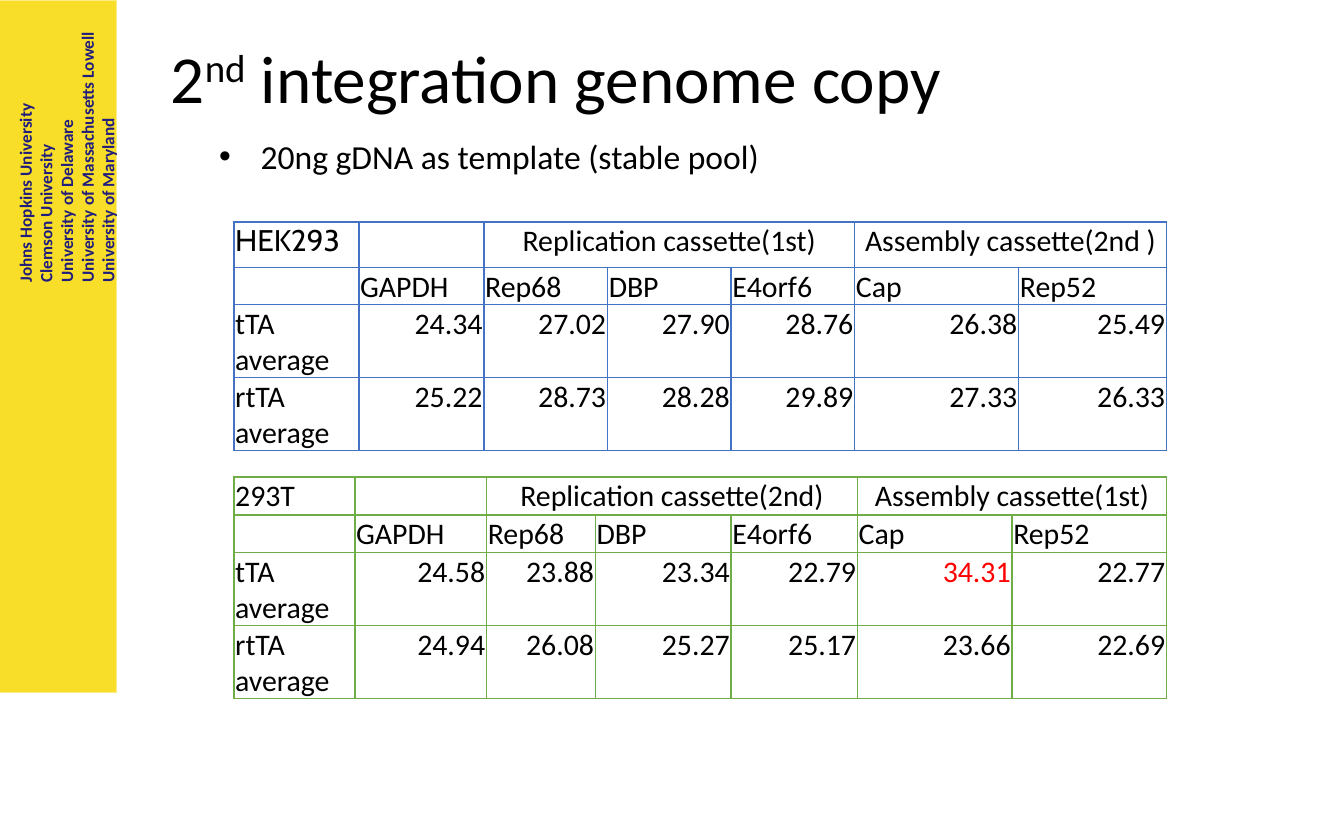
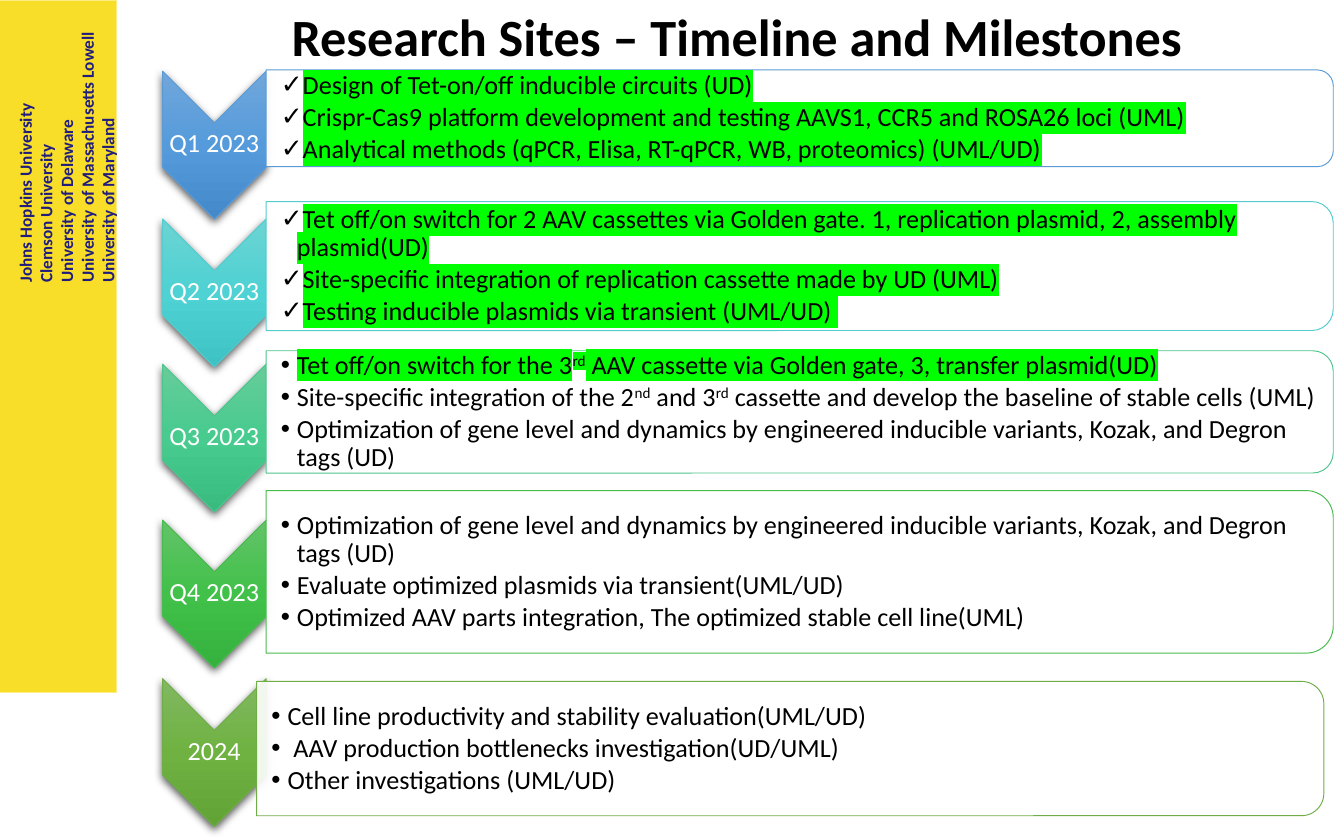
from lxml import etree
from pptx import Presentation
from pptx.dml.color import RGBColor
from pptx.enum import shapes, text
from pptx.oxml import ns
from pptx.util import Inches, Pt

BLACK = RGBColor(0x00, 0x00, 0x00)
WHITE = RGBColor(0xFF, 0xFF, 0xFF)
RED = RGBColor(0xFF, 0x00, 0x00)
DONE_GREEN = RGBColor(0x00, 0xFF, 0x00)
BAND_YELLOW = RGBColor(0xF8, 0xDE, 0x28)
BAND_EDGE = RGBColor(0xFB, 0xEC, 0x85)
NAVY = RGBColor(0x21, 0x1D, 0x7D)
BLUE_BORDER = RGBColor(0x44, 0x72, 0xC4)
GREEN = RGBColor(0x70, 0xAD, 0x47)
BLUE_STAGE = RGBColor(0x5B, 0x9B, 0xD5)
TEAL_STAGE = RGBColor(0x54, 0xCC, 0xCD)
MINT_STAGE = RGBColor(0x4D, 0xC5, 0x8D)
LEAF_STAGE = RGBColor(0x48, 0xBB, 0x4F)
BLUE_FADE = [RGBColor(0x71, 0xA6, 0xDB), RGBColor(0x55, 0x9B, 0xDB), RGBColor(0x44, 0x8A, 0xCA)]
TEAL_FADE = [RGBColor(0x6C, 0xD3, 0xD3), RGBColor(0x4E, 0xD2, 0xD3), RGBColor(0x3E, 0xC2, 0xC3)]
MINT_FADE = [RGBColor(0x67, 0xCC, 0x9A), RGBColor(0x47, 0xCB, 0x8E), RGBColor(0x39, 0xBB, 0x7F)]
LEAF_FADE = [RGBColor(0x63, 0xC3, 0x68), RGBColor(0x42, 0xC1, 0x4A), RGBColor(0x34, 0xB2, 0x3D)]
GREEN_FADE = [RGBColor(0x81, 0xB8, 0x61), RGBColor(0x6F, 0xB2, 0x42), RGBColor(0x62, 0xA3, 0x36)]

LEFT, CENTER, RIGHT = text.PP_ALIGN.LEFT, text.PP_ALIGN.CENTER, text.PP_ALIGN.RIGHT
TOP, MIDDLE = text.MSO_ANCHOR.TOP, text.MSO_ANCHOR.MIDDLE
NO_FIT, GROW = text.MSO_AUTO_SIZE.NONE, text.MSO_AUTO_SIZE.SHAPE_TO_FIT_TEXT

UNIVERSITIES = [
    "Johns Hopkins University",
    "Clemson University",
    "University of Delaware",
    "University of Massachusetts Lowell",
    "University of Maryland",
]
GENES = ["", "GAPDH", "Rep68", "DBP", "E4orf6", "Cap", "Rep52"]
HEK293_ROWS = [
    ["HEK293", "", "Replication cassette(1st)", "", "", "Assembly cassette(2nd )", ""],
    GENES,
    ["tTA average", "24.34", "27.02", "27.90", "28.76", "26.38", "25.49"],
    ["rtTA average", "25.22", "28.73", "28.28", "29.89", "27.33", "26.33"],
]
T293_ROWS = [
    ["293T", "", "Replication cassette(2nd)", "", "", "Assembly cassette(1st)", ""],
    GENES,
    ["tTA average", "24.58", "23.88", "23.34", "22.79", "34.31", "22.77"],
    ["rtTA average", "24.94", "26.08", "25.27", "25.17", "23.66", "22.69"],
]
OPTIMIZATION = ("Optimization of gene level and dynamics by engineered inducible variants, "
                "Kozak, and Degron tags (UD)")
STAGES = [
    ("Q1 2023", 0.53, (1.98, 0.52, 0.72), BLUE_STAGE, BLUE_FADE, "✓", 3, [
        "Design of Tet-on/off inducible circuits (UD)",
        "Crispr-Cas9 platform development and testing AAVS1, CCR5 and ROSA26 loci (UML)",
        "Analytical methods (qPCR, Elisa, RT-qPCR, WB, proteomics) (UML/UD)"]),
    ("Q2 2023", 1.63, (1.98, 1.5, 0.96), TEAL_STAGE, TEAL_FADE, "✓", 3, [
        "Tet off/on switch for 2 AAV cassettes via Golden gate. 1, replication plasmid, "
        "2, assembly plasmid(UD)",
        "Site-specific integration of replication cassette made by UD (UML)",
        "Testing inducible plasmids via transient (UML/UD) "]),
    ("Q3 2023", 2.71, (1.98, 2.61, 0.91), MINT_STAGE, MINT_FADE, "•", 1, [
        "Tet off/on switch for the 3^rd^ AAV cassette via Golden gate, 3, transfer plasmid(UD)",
        "Site-specific integration of the 2^nd^ and 3^rd^ cassette and develop the baseline "
        "of stable cells (UML)",
        OPTIMIZATION]),
    ("Q4 2023", 3.87, (1.98, 3.65, 1.21), LEAF_STAGE, LEAF_FADE, "•", 0, [
        OPTIMIZATION,
        "Evaluate optimized plasmids via transient(UML/UD)",
        "Optimized AAV parts integration, The optimized stable cell line(UML)"]),
    ("2024", 5.05, (1.91, 5.07, 1), GREEN, GREEN_FADE, "•", 0, [
        "Cell line productivity and stability evaluation(UML/UD)",
        " AAV production bottlenecks investigation(UD/UML)",
        "Other investigations (UML/UD)"]),
]


def apply(target, values):
    for name, value in values.items():
        setattr(target, name, value)


def add_xml(parent, tag, **attributes):
    return etree.SubElement(parent, ns.qn(tag), attributes)


def place(shape, left, top, width, height):
    apply(shape, {"left": Inches(left), "top": Inches(top),
                  "width": Inches(width), "height": Inches(height)})


def set_frame(frame, insets=None, **values):
    apply(frame, values)
    if insets:
        sides = ("margin_left", "margin_top", "margin_right", "margin_bottom")
        apply(frame, dict(zip(sides, map(Inches, insets))))


def write(paragraph, wording, size, color=BLACK, bold=False, name="Calibri",
          highlight=None, **layout):
    apply(paragraph, layout)
    for index, part in enumerate(wording.split("^")):
        run = paragraph.add_run()
        run.text = part
        apply(run.font, {"size": Pt(size), "bold": bold, "name": name})
        run.font.color.rgb = color
        properties = run.font._element
        if index % 2:
            properties.set("baseline", "30000")
        if highlight:
            mark = etree.Element(ns.qn("a:highlight"))
            add_xml(mark, "a:srgbClr", val=str(highlight))
            properties.find(ns.qn("a:solidFill")).addnext(mark)


def add_bullet(paragraph, symbol, indent):
    properties = paragraph._p.get_or_add_pPr()
    properties.set("marL", str(Inches(indent)))
    properties.set("indent", str(-Inches(indent)))
    add_xml(properties, "a:buFont", typeface="Arial")
    add_xml(properties, "a:buChar", char=symbol)


def next_paragraph(frame, index):
    return frame.add_paragraph() if index else frame.paragraphs[0]


def add_textbox(slide, box, **frame_values):
    textbox = slide.shapes.add_textbox(*map(Inches, box))
    set_frame(textbox.text_frame, **frame_values)
    return textbox


def add_sidebar(slide):
    band = slide.shapes.add_shape(shapes.MSO_SHAPE.RECTANGLE, 0, 0, Inches(0.87), Inches(5.15))
    band.shadow.inherit = False
    band.fill.solid()
    band.fill.fore_color.rgb = BAND_YELLOW
    band.line.color.rgb = BAND_EDGE
    band.line.width = Pt(0.5)
    partners = add_textbox(slide, (-0.6, 0.78, 2.08, 0.76), word_wrap=False, auto_size=GROW)
    partners.rotation = 270
    partners.fill.solid()
    partners.fill.fore_color.rgb = BAND_YELLOW
    for index, university in enumerate(UNIVERSITIES):
        write(next_paragraph(partners.text_frame, index), university, 9.2, NAVY, bold=True)


def set_title(slide, wording, box, size, anchor, **style):
    title = slide.shapes.title
    place(title, *box)
    set_frame(title.text_frame, vertical_anchor=anchor, word_wrap=True, auto_size=NO_FIT)
    write(title.text_frame.paragraphs[0], wording, size, **style)


def set_borders(cell, color):
    properties = cell._tc.get_or_add_tcPr()
    for side in ("a:lnL", "a:lnR", "a:lnT", "a:lnB"):
        border = add_xml(properties, side, w=str(Pt(1)))
        add_xml(add_xml(border, "a:solidFill"), "a:srgbClr", val=str(color))


def cell_alignment(row, column):
    if row == 0 and column >= 2:
        return CENTER
    return RIGHT if row >= 2 and column >= 1 else LEFT


def add_cycle_table(slide, top, height, rows, widths, heights, border, fonts={}, colors={}):
    frame = slide.shapes.add_table(len(rows), len(widths), Inches(1.74), Inches(top),
                                   Inches(6.95), Inches(height))
    table = frame.table
    apply(table, {"first_row": False, "horz_banding": False})
    for column, width in zip(table.columns, widths):
        column.width = Inches(width)
    for row, row_height in zip(table.rows, heights):
        row.height = Inches(row_height)
    for r, values in enumerate(rows):
        for c, value in enumerate(values):
            cell = table.cell(r, c)
            set_frame(cell, insets=(0.01, 0.01, 0.01, 0))
            set_borders(cell, border)
            cell.fill.background()
            paragraph = cell.text_frame.paragraphs[0]
            if value:
                write(paragraph, value, 16, colors.get(value, BLACK),
                      name=fonts.get(value, "Calibri"), alignment=cell_alignment(r, c))
            else:
                add_xml(paragraph._p, "a:endParaRPr", sz="1600")
    for first, last in ((2, 4), (5, 6)):
        table.cell(0, first).merge(table.cell(0, last))
    frame.height = Inches(height)


def add_turned_shape(slide, kind, left, top, width, height, edge):
    shape = slide.shapes.add_shape(kind, Inches(left + (width - height) / 2),
                                   Inches(top + (height - width) / 2),
                                   Inches(height), Inches(width))
    shape.rotation = 90
    shape.shadow.inherit = False
    shape.line.color.rgb = edge
    shape.line.width = Pt(0.5)
    return shape


def fill_gradient(shape, colors):
    gradient = etree.Element(ns.qn("a:gradFill"), rotWithShape="0")
    stops = add_xml(gradient, "a:gsLst")
    for position, color in zip(("0", "50000", "100000"), colors):
        add_xml(add_xml(stops, "a:gs", pos=position), "a:srgbClr", val=str(color))
    add_xml(gradient, "a:lin", ang="5400000", scaled="0")
    shape._element.spPr.find(ns.qn("a:prstGeom")).addnext(gradient)


def add_soft_shadow(shape):
    effects = shape._element.spPr.find(ns.qn("a:effectLst"))
    shadow = add_xml(effects, "a:outerShdw", blurRad=str(Pt(4.5)), dist=str(Pt(1.5)),
                     dir="5400000", algn="ctr", rotWithShape="0")
    add_xml(add_xml(shadow, "a:srgbClr", val=str(BLACK)), "a:alpha", val="63000")


def add_stage(slide, label, chevron_top, panel_box, edge, fade, symbol, done, tasks):
    chevron = add_turned_shape(slide, shapes.MSO_SHAPE.CHEVRON, 1.21, chevron_top,
                               0.77, 1.1, edge)
    fill_gradient(chevron, fade)
    add_soft_shadow(chevron)
    period = add_textbox(slide, (1.21, chevron_top + 0.38, 0.77, 0.33), insets=[0.01] * 4,
                         word_wrap=True, vertical_anchor=MIDDLE)
    write(period.text_frame.paragraphs[0], label, 14, WHITE,
          alignment=CENTER, line_spacing=0.9)

    left, top, height = panel_box
    panel = add_turned_shape(slide, shapes.MSO_SHAPE.ROUND_2_SAME_RECTANGLE, left, top,
                             7.94, height, edge)
    panel.fill.solid()
    panel.fill.fore_color.rgb = WHITE
    fill_color = panel._element.spPr.find(ns.qn("a:solidFill"))[0]
    add_xml(fill_color, "a:alpha", val="90000")
    task_list = add_textbox(slide, (left, top + 0.05 * height, 7.9, 0.9 * height),
                            insets=(0.11, 0.01, 0.01, 0.01), word_wrap=True,
                            vertical_anchor=MIDDLE)
    for index, task in enumerate(tasks):
        paragraph = next_paragraph(task_list.text_frame, index)
        add_bullet(paragraph, symbol, 0.12)
        write(paragraph, task, 14, highlight=DONE_GREEN if index < done else None,
              level=1, line_spacing=0.9, space_after=Pt(2))


def build_genome_copy(deck):
    slide = deck.slides.add_slide(deck.slide_layouts[1])
    add_sidebar(slide)
    set_title(slide, "2^nd^ integration genome copy", (1.17, 0, 8.62, 1.21), 36, MIDDLE,
              alignment=LEFT, line_spacing=0.9)
    template_note = slide.placeholders[1]
    place(template_note, 1.53, 0.96, 4.33, 0.4)
    set_frame(template_note.text_frame, word_wrap=False, auto_size=GROW)
    paragraph = template_note.text_frame.paragraphs[0]
    add_bullet(paragraph, "•", 0.31)
    write(paragraph, "20ng gDNA as template (stable pool)", 18, space_before=Pt(0))
    add_cycle_table(slide, 1.65, 1.71, HEK293_ROWS,
                    [0.93, 0.93, 0.92, 0.92, 0.92, 1.22, 1.1], [0.34, 0.22, 0.22, 0.22],
                    BLUE_BORDER, fonts={"HEK293": "Cabin"})
    add_cycle_table(slide, 3.55, 1.66, T293_ROWS,
                    [0.9, 0.98, 0.81, 1.01, 0.94, 1.15, 1.15], [0.28] * 4,
                    GREEN, colors={"34.31": RED})


def build_timeline(deck):
    slide = deck.slides.add_slide(deck.slide_layouts[5])
    add_sidebar(slide)
    for stage in STAGES:
        add_stage(slide, *stage)
    set_title(slide, "Research Sites – Timeline and Milestones", (1.54, -0.02, 7.88, 0.57),
              28, TOP, bold=True, alignment=CENTER)


def main():
    deck = Presentation()
    apply(deck, {"slide_width": Inches(10), "slide_height": Inches(6.25)})
    build_genome_copy(deck)
    build_timeline(deck)
    deck.save("out.pptx")


if __name__ == "__main__":
    main()
